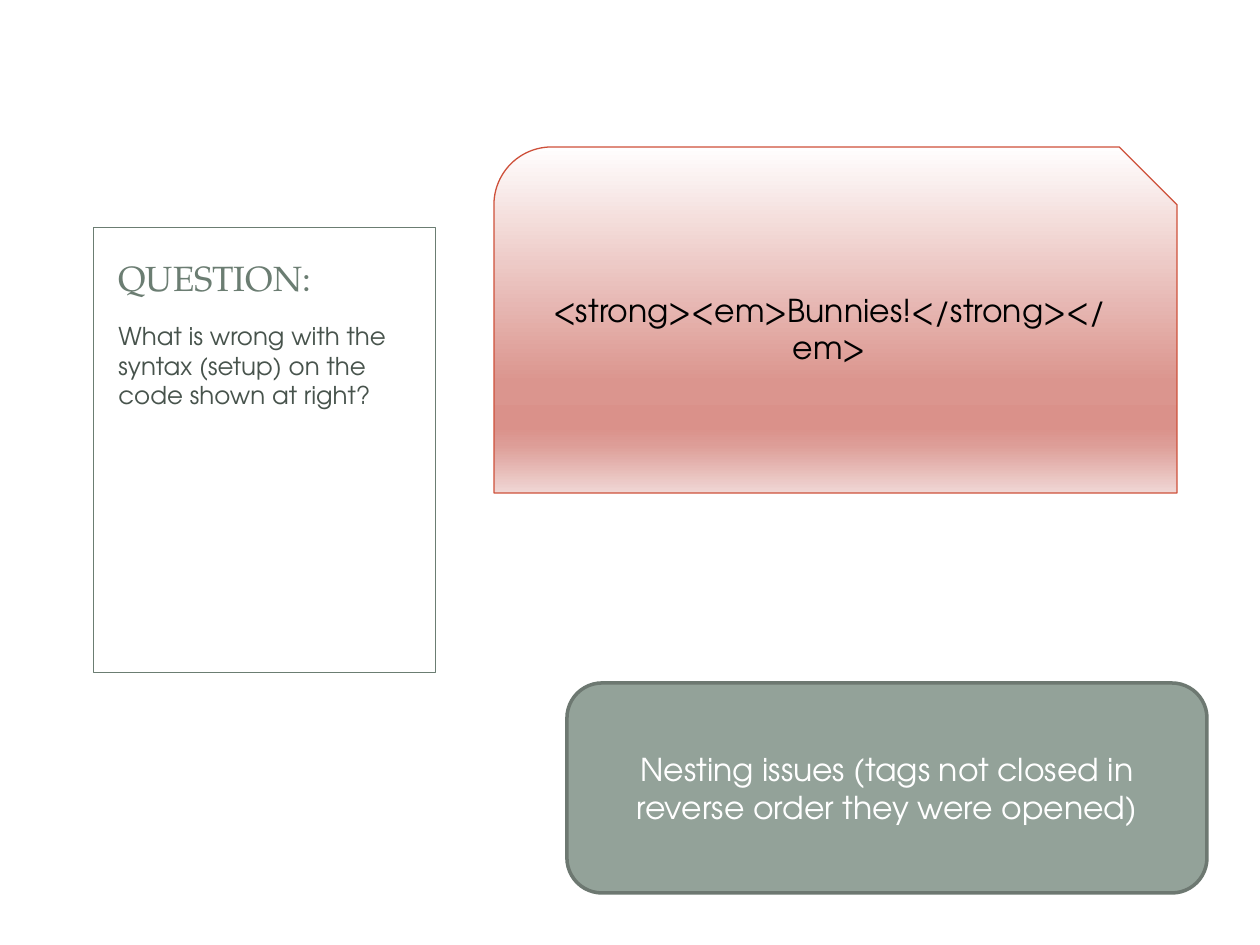
from lxml import etree
from pptx import Presentation, util as u
from pptx.dml.color import RGBColor
from pptx.enum import shapes, text
from pptx.oxml.ns import qn

PX = 914400 / 126
HUES = {"white": "FFFFFF", "black": "000000", "sage": "6B7D72",
        "slate": "47534C", "moss": "93A299", "edge": "6D7871", "rust": "CE503A"}
FADE = [(0, "FFFEFE"), (68, "DB958E"), (81, "DA918A"), (86, "DD9D97"), (100, "F0D7D5")]
SANS, SERIF = "TeX Gyre Adventor", "TeX Gyre Pagella"
KIND = shapes.MSO_SHAPE
ALIGN, ANCHOR = text.PP_ALIGN, text.MSO_ANCHOR


def emu(*box):
    return [u.Emu(round(n * PX)) for n in box]


def hue(name):
    return RGBColor.from_string(HUES[name])


def write(shape, words, size, color, font=SANS, align=ALIGN.LEFT,
          anchor=ANCHOR.TOP, before=0):
    frame = shape.text_frame
    frame.word_wrap = True
    frame.vertical_anchor = anchor
    para = frame.paragraphs[0]
    para.alignment = align
    para.space_before = u.Pt(before)
    run = para.add_run()
    run.text = words
    run.font.size = u.Pt(size)
    run.font.name = font
    run.font.color.rgb = hue(color)


def panel(slide, kind, box, line, width, fill=None):
    shape = slide.shapes.add_shape(kind, *emu(*box))
    shape.shadow.inherit = False
    shape.line.color.rgb = hue(line)
    shape.line.width = u.Pt(width)
    if fill:
        shape.fill.solid()
        shape.fill.fore_color.rgb = hue(fill)
    return shape


def shade(shape, stops):
    """Fill the shape from top to bottom with any number of stops."""
    shape.fill.gradient()
    grad = shape._element.spPr.find(qn("a:gradFill"))
    for child in list(grad):
        grad.remove(child)
    group = etree.SubElement(grad, qn("a:gsLst"))
    for pos, color in stops:
        stop = etree.SubElement(group, qn("a:gs"), pos=str(pos * 1000))
        etree.SubElement(stop, qn("a:srgbClr"), val=color)
    etree.SubElement(grad, qn("a:lin"), ang="5400000", scaled="0")


def question(slide, x, y, w, h):
    panel(slide, KIND.RECTANGLE, (x, y, w, h), "sage", 0.5, "white")
    pad = 13
    # Heading
    head = slide.shapes.add_textbox(*emu(x + pad, y + 12, w - 2 * pad, 66))
    write(head, "QUESTION:", 20, "sage", SERIF, anchor=ANCHOR.BOTTOM)
    # Body
    body = slide.shapes.add_textbox(*emu(x + pad, y + 88, w - 2 * pad, 346))
    write(body, "What is wrong with the syntax (setup) on the code shown at right?",
          14, "slate", before=4)


def answer(slide, *box):
    card = panel(slide, KIND.ROUNDED_RECTANGLE, box, "edge", 2, "moss")
    write(card, "Nesting issues (tags not closed in reverse order they were opened)",
          18, "white", align=ALIGN.CENTER, anchor=ANCHOR.MIDDLE)


def code(slide, *box):
    card = panel(slide, KIND.SNIP_ROUND_RECTANGLE, box, "rust", 0.75)
    shade(card, FADE)
    write(card, "<strong><em>Bunnies!</strong></em>", 18, "black",
          align=ALIGN.CENTER, anchor=ANCHOR.MIDDLE)


def main():
    deck = Presentation()
    deck.slide_width, deck.slide_height = emu(1260, 945)
    slide = deck.slides.add_slide(deck.slide_layouts[6])
    question(slide, 93, 227, 343, 445)
    answer(slide, 567, 683, 640, 210)
    code(slide, 494, 147, 683, 346)
    deck.save("out.pptx")


if __name__ == "__main__":
    main()
